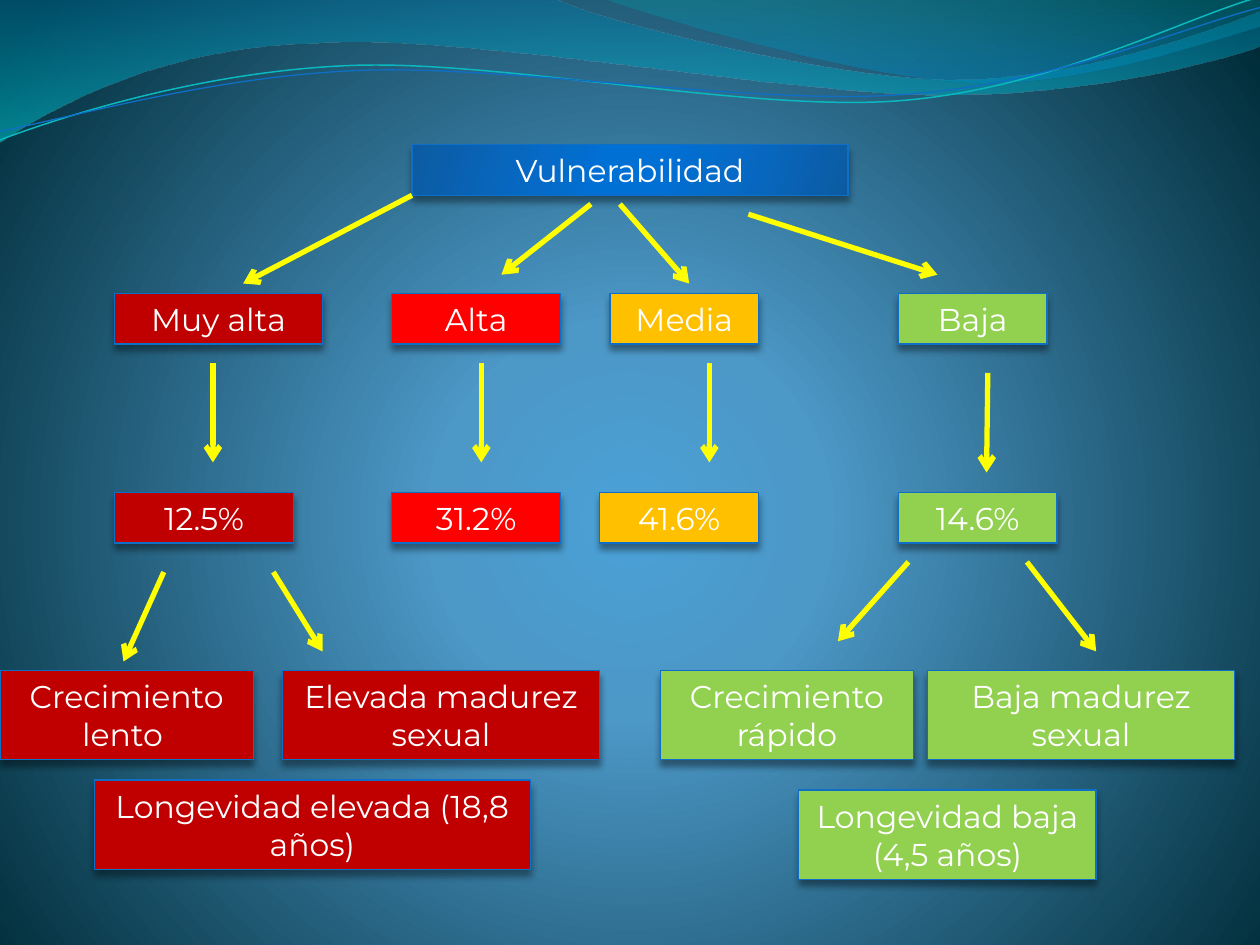
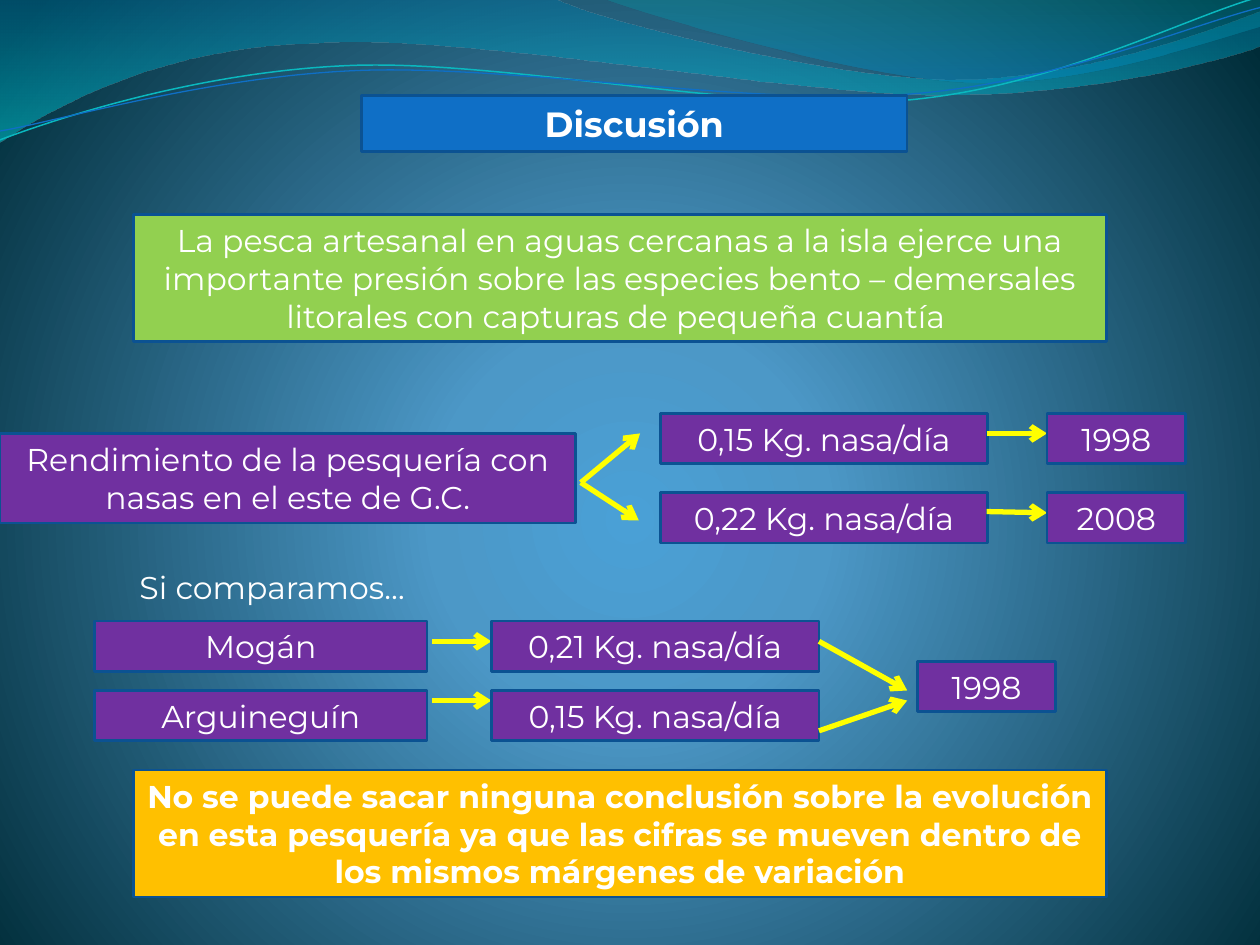
"""Builds two slides on fishing vulnerability and its discussion."""
from dataclasses import dataclass
from math import cos, radians, sin
from typing import NamedTuple, Optional

from lxml.etree import SubElement
from pptx import Presentation
from pptx.dml.color import RGBColor
from pptx.enum.shapes import MSO_CONNECTOR as Link, MSO_SHAPE as Preset
from pptx.enum.text import MSO_AUTO_SIZE as AutoSize, PP_ALIGN as Align
from pptx.oxml.ns import qn
from pptx.slide import Slide
from pptx.util import Inches, Pt

FONT = "Montserrat"
WHITE = RGBColor(0xFF, 0xFF, 0xFF)
BLACK = RGBColor(0x00, 0x00, 0x00)
YELLOW = RGBColor(0xFF, 0xFF, 0x00)
DARK_RED = RGBColor(0xC0, 0x00, 0x00)
RED = RGBColor(0xFF, 0x00, 0x00)
AMBER = RGBColor(0xFF, 0xC0, 0x00)
GREEN = RGBColor(0x92, 0xD0, 0x50)
PURPLE = RGBColor(0x70, 0x30, 0xA0)
BLUE = RGBColor(0x0F, 0x6F, 0xC6)
NAVY = RGBColor(0x0B, 0x52, 0x92)
AQUA = RGBColor(0x0A, 0xB8, 0xBF)
LINE_HEIGHTS = {1: 0.4, 2: 0.71, 3: 1.01}
STRAND_TILT = 357.3
STRAND_CENTER = (4.99, 0.58)


class Stop(NamedTuple):
    """Colour, position and opacity of a gradient stop, in percent."""
    position: int
    color: RGBColor
    opacity: int = 100


class Arrow(NamedTuple):
    """Start and end of an arrow in inches."""
    x1: float
    y1: float
    x2: float
    y2: float


class Box(NamedTuple):
    """Label with its place, number of text lines and fill."""
    text: str
    left: float
    top: float
    width: float
    fill: Optional[RGBColor]
    lines: int = 1
    bold: bool = False


@dataclass(frozen=True)
class BoxStyle:
    """Outline and shadow shared by the boxes of a slide."""
    edge: RGBColor
    edge_width: float
    shadow: bool


@dataclass(frozen=True)
class Level:
    """Vulnerability level, its share and the arrow between them."""
    name: str
    share: str
    color: RGBColor
    left: float
    width: float
    share_left: float
    share_width: float
    arrow: Arrow


@dataclass(frozen=True)
class Wave:
    """Curved band or strand: a start, then lines (1 point) or cubics (3 points)."""
    start: tuple
    segments: tuple
    stops: tuple = ()
    line: Optional[RGBColor] = None
    line_width: float = 0


BACKDROP = (Stop(0, RGBColor(0x4A, 0xA0, 0xD6)), Stop(25, RGBColor(0x4C, 0x98, 0xC7)),
            Stop(100, RGBColor(0x00, 0x2C, 0x38)))
HEADING_STOPS = tuple(Stop(position, color) for position, color in (
    (0, RGBColor(0x0C, 0x5B, 0xA2)), (30, RGBColor(0x06, 0x6A, 0xC6)),
    (45, RGBColor(0x00, 0x70, 0xD5)), (55, RGBColor(0x00, 0x70, 0xD5)),
    (73, RGBColor(0x06, 0x6A, 0xC6)), (100, RGBColor(0x0C, 0x5B, 0xA2))))

WAVES = (
    Wave((0, 0), (((4.4, -0.01),),
                  ((4.76, 0.17), (6.64, 0.63), (7.58, 0.63)),
                  ((8.53, 0.63), (9.58, 0.26), (10, 0.09)),
                  ((10.01, 0.36),),
                  ((9.83, 0.44), (8.7, 0.76), (7.46, 0.75)),
                  ((6.22, 0.75), (3.82, 0.28), (2.57, 0.34)),
                  ((1.29, 0.36), (0.46, 0.83), (-0.01, 1.13)),
                  ((0, 0),)),
         (Stop(0, RGBColor(0x00, 0x74, 0xA1), 45), Stop(100, RGBColor(0x00, 0xC6, 0xCF), 55))),
    Wave((4.79, -0.01), (((5.09, 0.11), (6.82, 0.62), (7.69, 0.65)),
                         ((8.56, 0.69), (9.61, 0.32), (10, 0.21)),
                         ((10, 0),),
                         ((4.79, -0.01),)),
         (Stop(0, RGBColor(0x00, 0xA1, 0xA9), 30), Stop(80, RGBColor(0x00, 0x8B, 0xBF), 45))),
    Wave((0, 1.11), (((0.48, 0.93), (1.58, 0.57), (2.77, 0.52)),
                     ((3.95, 0.47), (5.93, 0.89), (7.13, 0.8)),
                     ((8.33, 0.71), (9.38, 0.15), (9.98, -0.02))),
         line=AQUA, line_width=0.85),
    Wave((0, 1.04), (((0.47, 0.96), (1.64, 0.61), (2.83, 0.56)),
                     ((4.03, 0.51), (5.97, 0.84), (7.17, 0.75)),
                     ((8.36, 0.67), (9.41, 0.21), (10, 0.06))),
         line=BLUE, line_width=0.75),
)

LEVELS = (
    Level("Muy alta", "12.5%", DARK_RED, 0.91, 1.65, 0.91, 1.42, Arrow(1.69, 2.88, 1.69, 3.67)),
    Level("Alta", "31.2%", RED, 3.11, 1.34, 3.11, 1.34, Arrow(3.82, 2.88, 3.82, 3.67)),
    Level("Media", "41.6%", AMBER, 4.84, 1.18, 4.76, 1.26, Arrow(5.63, 2.88, 5.63, 3.67)),
    Level("Baja", "14.6%", GREEN, 7.13, 1.18, 7.13, 1.26, Arrow(7.84, 2.96, 7.83, 3.75)),
)
TRAITS = (
    Box("Crecimiento lento ", 0, 5.32, 2.01, DARK_RED, 2),
    Box("Longevidad elevada (18,8 años)", 0.75, 6.19, 3.46, DARK_RED, 2),
    Box("Elevada madurez sexual", 2.24, 5.32, 2.52, DARK_RED, 2),
    Box("Crecimiento rápido", 5.24, 5.32, 2.01, GREEN, 2),
    Box("Baja madurez sexual", 7.36, 5.32, 2.44, GREEN, 2),
    Box("Longevidad baja (4,5 años)", 6.34, 6.27, 2.36, GREEN, 2),
)
BRANCHES = (
    Arrow(3.27, 1.55, 1.93, 2.25), Arrow(4.69, 1.62, 3.98, 2.18),
    Arrow(4.92, 1.62, 5.47, 2.25), Arrow(5.94, 1.7, 7.44, 2.18),
    Arrow(1.3, 4.54, 0.98, 5.25), Arrow(2.17, 4.54, 2.56, 5.17),
    Arrow(7.21, 4.46, 6.65, 5.09), Arrow(8.15, 4.46, 8.7, 5.17),
)

DISCUSSION = (
    Box("La pesca artesanal en aguas cercanas a la isla ejerce una importante presión "
        "sobre las especies bento – demersales litorales con capturas de pequeña cuantía ",
        1.06, 1.7, 7.72, GREEN, 3),
    Box("Rendimiento de la pesquería con nasas en el este de G.C.", 0, 3.44, 4.57, PURPLE, 2),
    Box("Si comparamos…", 0.43, 4.46, 3.46, None),
    Box("1998", 7.28, 5.25, 1.1, PURPLE),
    Box("No se puede sacar ninguna conclusión sobre la evolución en esta pesquería ya que "
        "las cifras se mueven dentro de los mismos márgenes de variación",
        1.06, 6.11, 7.72, AMBER, 3, True),
)
YIELDS_BY_YEAR = (("0,15 Kg. nasa/día", "1998", 3.28, Arrow(7.83, 3.44, 8.31, 3.44)),
                  ("0,22 Kg. nasa/día", "2008", 3.91, Arrow(7.83, 4.06, 8.31, 4.07)))
YIELDS_BY_PORT = (("Mogán", "0,21 Kg. nasa/día", 4.93, Arrow(3.43, 5.09, 3.9, 5.09)),
                  ("Arguineguín", "0,15 Kg. nasa/día", 5.48, Arrow(3.43, 5.56, 3.9, 5.56)))
COMPARISONS = (
    Arrow(4.61, 3.83, 5.08, 3.44), Arrow(4.61, 3.83, 5.07, 4.13),
    Arrow(6.5, 5.8, 7.2, 5.56), Arrow(6.5, 5.09, 7.2, 5.48),
)
RAISED = BoxStyle(BLUE, 0.75, True)
FLAT = BoxStyle(NAVY, 1.5, False)


def add_color(parent, color: RGBColor, opacity: int) -> None:
    """Append a colour with its opacity to an XML element."""
    tint = SubElement(parent, qn("a:srgbClr"), val=str(color))
    if opacity < 100:
        SubElement(tint, qn("a:alpha"), val=str(opacity * 1000))


def paint_gradient(owner, fill, stops: tuple, angle: Optional[int] = None) -> None:
    """Fill with a linear gradient, or a radial one when no angle is given."""
    fill.gradient()
    gradient = next(owner.iter(qn("a:gradFill")))
    gradient.clear()
    stop_list = SubElement(gradient, qn("a:gsLst"))
    for stop in stops:
        mark = SubElement(stop_list, qn("a:gs"), pos=str(stop.position * 1000))
        add_color(mark, stop.color, stop.opacity)
    if angle is None:
        radial = SubElement(gradient, qn("a:path"), {"path": "circle"})
        SubElement(radial, qn("a:fillToRect"), l="10000", t="110000", r="10000", b="100000")
    else:
        SubElement(gradient, qn("a:lin"), ang=str(angle * 60000), scaled="0")


def level_out(point: tuple) -> tuple:
    """Turn a strand's point back around the centre, undoing the tilt."""
    turn = radians(-STRAND_TILT)
    dx, dy = (n - c for n, c in zip(point, STRAND_CENTER))
    return (STRAND_CENTER[0] + dx * cos(turn) - dy * sin(turn),
            STRAND_CENTER[1] + dx * sin(turn) + dy * cos(turn))


def bend(shape, segments: tuple) -> None:
    """Join the vertices of each three-point segment into one cubic curve."""
    vertices = iter(list(shape._element.iter(qn("a:lnTo"))))
    for segment in segments:
        first, *others = [next(vertices) for _ in segment]
        if others:
            curve = SubElement(first.getparent(), qn("a:cubicBezTo"))
            first.addprevious(curve)
            for vertex in (first, *others):
                curve.append(vertex[0])
                vertex.getparent().remove(vertex)


def draw_wave(slide: Slide, wave: Wave):
    """Draw a filled band or a thin strand."""
    points = [wave.start, *(point for segment in wave.segments for point in segment)]
    if not wave.stops:
        points = [level_out(point) for point in points]
    vertices = [(Inches(x), Inches(y)) for x, y in points]
    builder = slide.shapes.build_freeform(*vertices[0])
    builder.add_line_segments(vertices[1:], close=bool(wave.stops))
    shape = builder.convert_to_shape()
    bend(shape, wave.segments)
    shape.shadow.inherit = False
    if wave.stops:
        paint_gradient(shape._element, shape.fill, wave.stops, 90)
        shape.line.fill.background()
    else:
        shape.rotation = STRAND_TILT
        shape.fill.background()
        shape.line.color.rgb = wave.line
        shape.line.width = Pt(wave.line_width)
    return shape


def draw_box(slide: Slide, box: Box, style: BoxStyle, size: int = 18,
             stops: tuple = ()) -> None:
    """Draw a label, as a filled rectangle or as plain text."""
    height = LINE_HEIGHTS[box.lines] * size / 18
    place = [Inches(n) for n in (box.left, box.top, box.width, height)]
    if box.fill is None:
        shape = slide.shapes.add_textbox(*place)
    else:
        shape = slide.shapes.add_shape(Preset.RECTANGLE, *place)
        shape.fill.solid()
        shape.fill.fore_color.rgb = box.fill
        shape.line.color.rgb = style.edge
        shape.line.width = Pt(style.edge_width)
        shape.shadow.inherit = False
        if style.shadow:
            effects = shape._element.spPr.find(qn("a:effectLst"))
            shade = SubElement(effects, qn("a:outerShdw"), blurRad=str(Pt(4)),
                               dist=str(Pt(3.4)), dir="5400000", rotWithShape="0")
            add_color(shade, BLACK, 40)
    if stops:
        paint_gradient(shape._element, shape.fill, stops, 16)
    frame = shape.text_frame
    frame.word_wrap = True
    frame.auto_size = AutoSize.SHAPE_TO_FIT_TEXT
    paragraph = frame.paragraphs[0]
    paragraph.text = box.text
    paragraph.alignment = Align.CENTER
    font = paragraph.font
    font.name, font.size, font.bold = FONT, Pt(size), box.bold
    font.color.rgb = WHITE


def draw_arrow(slide: Slide, arrow: Arrow) -> None:
    """Draw a yellow arrow."""
    link = slide.shapes.add_connector(Link.STRAIGHT, *(Inches(n) for n in arrow))
    link.line.color.rgb = YELLOW
    link.line.width = Pt(3)
    properties = link._element.spPr
    SubElement(properties.find(qn("a:ln")), qn("a:tailEnd"), type="arrow")
    SubElement(properties, qn("a:effectLst"))


def dress_master(master, slide: Slide) -> None:
    """Give the master its backdrop and move the waves drawn on a slide to it."""
    paint_gradient(master._element, master.background.fill, BACKDROP)
    for number, wave in enumerate(WAVES, start=101):
        element = draw_wave(slide, wave)._element
        element.nvSpPr.cNvPr.set("id", str(number))
        master._element.cSld.spTree.append(element)


def build_vulnerability(slide: Slide) -> None:
    """Build the tree of vulnerability levels."""
    draw_box(slide, Box("Vulnerabilidad", 3.27, 1.15, 3.46, BLUE), RAISED, stops=HEADING_STOPS)
    for level in LEVELS:
        draw_box(slide, Box(level.name, level.left, 2.33, level.width, level.color), RAISED)
        draw_arrow(slide, level.arrow)
        draw_box(slide, Box(level.share, level.share_left, 3.91, level.share_width,
                            level.color), RAISED)
    for trait in TRAITS:
        draw_box(slide, trait, RAISED)
    for branch in BRANCHES:
        draw_arrow(slide, branch)


def build_discussion(slide: Slide) -> None:
    """Build the discussion of fishing yields."""
    draw_box(slide, Box("Discusión", 2.87, 0.76, 4.33, BLUE, bold=True), FLAT, size=20)
    for statement in DISCUSSION:
        draw_box(slide, statement, FLAT)
    for amount, year, top, arrow in YIELDS_BY_YEAR:
        draw_box(slide, Box(amount, 5.24, top, 2.6, PURPLE), FLAT)
        draw_arrow(slide, arrow)
        draw_box(slide, Box(year, 8.31, top, 1.1, PURPLE), FLAT)
    for port, amount, top, arrow in YIELDS_BY_PORT:
        draw_box(slide, Box(port, 0.75, top, 2.64, PURPLE), FLAT)
        draw_arrow(slide, arrow)
        draw_box(slide, Box(amount, 3.9, top, 2.6, PURPLE), FLAT)
    for comparison in COMPARISONS:
        draw_arrow(slide, comparison)


def main() -> None:
    """Build and save the deck."""
    deck = Presentation()
    deck.slide_width, deck.slide_height = Inches(10), Inches(7.5)
    levels, discussion = (deck.slides.add_slide(deck.slide_layouts[6]) for _ in range(2))
    dress_master(deck.slide_master, levels)
    build_vulnerability(levels)
    build_discussion(discussion)
    deck.save("out.pptx")


if __name__ == "__main__":
    main()
